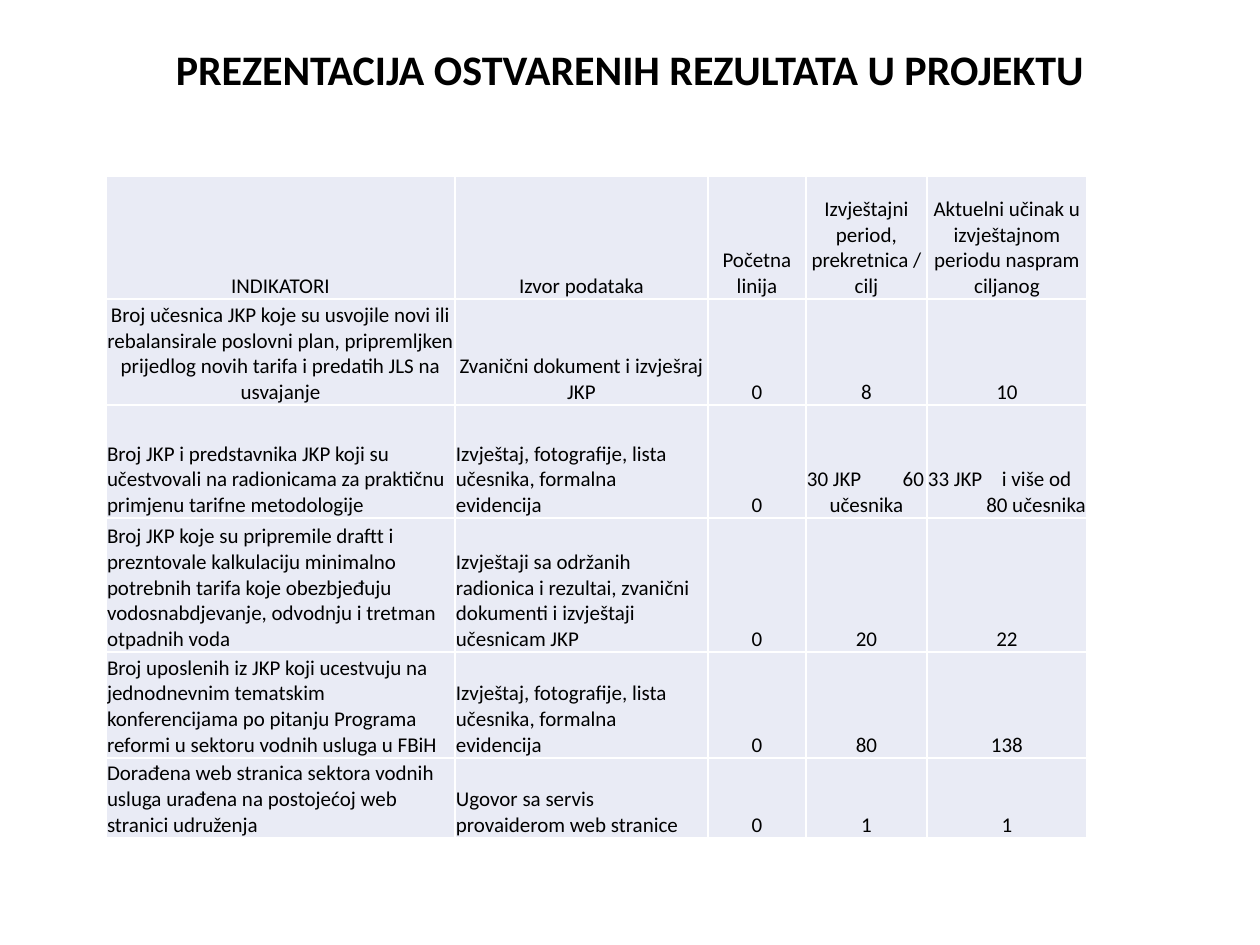
from dataclasses import dataclass

from lxml.etree import SubElement
from pptx import Presentation
from pptx.dml.color import RGBColor
from pptx.enum.text import MSO_ANCHOR as ANCHOR, PP_ALIGN as ALIGN
from pptx.oxml.ns import qn
from pptx.util import Pt

TITLE = "PREZENTACIJA OSTVARENIH REZULTATA U PROJEKTU"
EVIDENCE = "Izvještaj, fotografije, lista učesnika, formalna evidencija"
ROWS = [
    ("INDIKATORI", "Izvor podataka", "Početna linija",
     "Izvještajni period, prekretnica / cilj",
     "Aktuelni učinak u izvještajnom periodu naspram ciljanog"),
    ("Broj učesnica JKP koje su usvojile novi ili rebalansirale poslovni plan, "
     "pripremljken prijedlog novih tarifa i predatih JLS na usvajanje",
     "Zvanični dokument i izvješraj JKP", "0", "8", "10"),
    ("Broj JKP i predstavnika JKP koji su učestvovali na radionicama za "
     "praktičnu primjenu tarifne metodologije",
     EVIDENCE, "0", "30 JKP\t60\nučesnika", "33 JKP\ti više od\n80 učesnika"),
    ("Broj JKP koje su pripremile draftt i prezntovale kalkulaciju minimalno "
     "potrebnih tarifa koje obezbjeđuju vodosnabdjevanje, odvodnju i tretman "
     "otpadnih voda",
     "Izvještaji sa održanih radionica i rezultai, zvanični dokumenti i "
     "izvještaji učesnicam JKP", "0", "20", "22"),
    ("Broj uposlenih iz JKP koji ucestvuju na jednodnevnim tematskim "
     "konferencijama po pitanju Programa reformi u sektoru vodnih usluga u FBiH",
     EVIDENCE, "0", "80", "138"),
    ("Dorađena web stranica sektora vodnih usluga urađena na postojećoj web "
     "stranici udruženja",
     "Ugovor sa servis provaiderom web stranice", "0", "1", "1"),
]
COL_WIDTHS = [349, 253, 98, 121, 160]
ROW_HEIGHTS = [123, 106, 113, 134, 106, 80]
TABLE_LEFT, TABLE_TOP = 106, 176
CENTERED_ROWS, TEXT_COLS = 2, 2
SPLIT_CELLS = {
    (2, 3): ("l", 75, ALIGN.CENTER),
    (2, 4): ("l", 74, ALIGN.RIGHT),
}
SPLIT_CELLS[2, 3] = ("r", 117, ALIGN.CENTER)


@dataclass(frozen=True)
class Theme:
    font: str = "Calibri"
    text: RGBColor = RGBColor(0, 0, 0)
    cell: RGBColor = RGBColor(0xE9, 0xEB, 0xF5)
    title_size: int = 24
    body_size: int = 12


THEME = Theme()


def px(n):
    return round(n * 914400 / 126)


def style(p, size, align, bold=False):
    p.alignment = align
    for r in p.runs:
        r.font.name = THEME.font
        r.font.size = Pt(size)
        r.font.bold = bold
        r.font.color.rgb = THEME.text


def add_tab(p, side, pos):
    tabs = SubElement(p._p.get_or_add_pPr(), qn("a:tabLst"))
    SubElement(tabs, qn("a:tab"), pos=str(px(pos)), algn=side)


def add_title(slide):
    tf = slide.shapes.add_textbox(px(63), px(43), px(1134), px(93)).text_frame
    tf.word_wrap = True
    tf.vertical_anchor = ANCHOR.TOP
    tf.text = TITLE
    p = tf.paragraphs[0]
    p.line_spacing = 0.9
    style(p, THEME.title_size, ALIGN.CENTER, bold=True)


def fill_cell(cell, text, row, col):
    cell.fill.solid()
    cell.fill.fore_color.rgb = THEME.cell
    cell.vertical_anchor = ANCHOR.BOTTOM
    cell.margin_left = cell.margin_right = cell.margin_top = px(1)
    cell.margin_bottom = 0
    cell.text_frame.text = text
    paragraphs = cell.text_frame.paragraphs
    if (row, col) in SPLIT_CELLS:
        side, pos, last_align = SPLIT_CELLS[row, col]
        add_tab(paragraphs[0], side, pos)
        aligns = [ALIGN.LEFT, last_align]
    else:
        is_left = row >= CENTERED_ROWS and col < TEXT_COLS
        aligns = [ALIGN.LEFT if is_left else ALIGN.CENTER]
    for p, align in zip(paragraphs, aligns):
        style(p, THEME.body_size, align)


def add_results(slide):
    table = slide.shapes.add_table(
        len(ROWS), len(COL_WIDTHS), px(TABLE_LEFT), px(TABLE_TOP),
        px(sum(COL_WIDTHS)), px(sum(ROW_HEIGHTS))).table
    table.first_row = table.horz_banding = False
    for column, width in zip(table.columns, COL_WIDTHS):
        column.width = px(width)
    for i, (height, texts) in enumerate(zip(ROW_HEIGHTS, ROWS)):
        table.rows[i].height = px(height)
        for j, text in enumerate(texts):
            fill_cell(table.cell(i, j), text, i, j)


def main():
    prs = Presentation()
    prs.slide_width, prs.slide_height = px(1260), px(945)
    slide = prs.slides.add_slide(prs.slide_layouts[6])
    add_title(slide)
    add_results(slide)
    prs.save("out.pptx")


if __name__ == "__main__":
    main()
